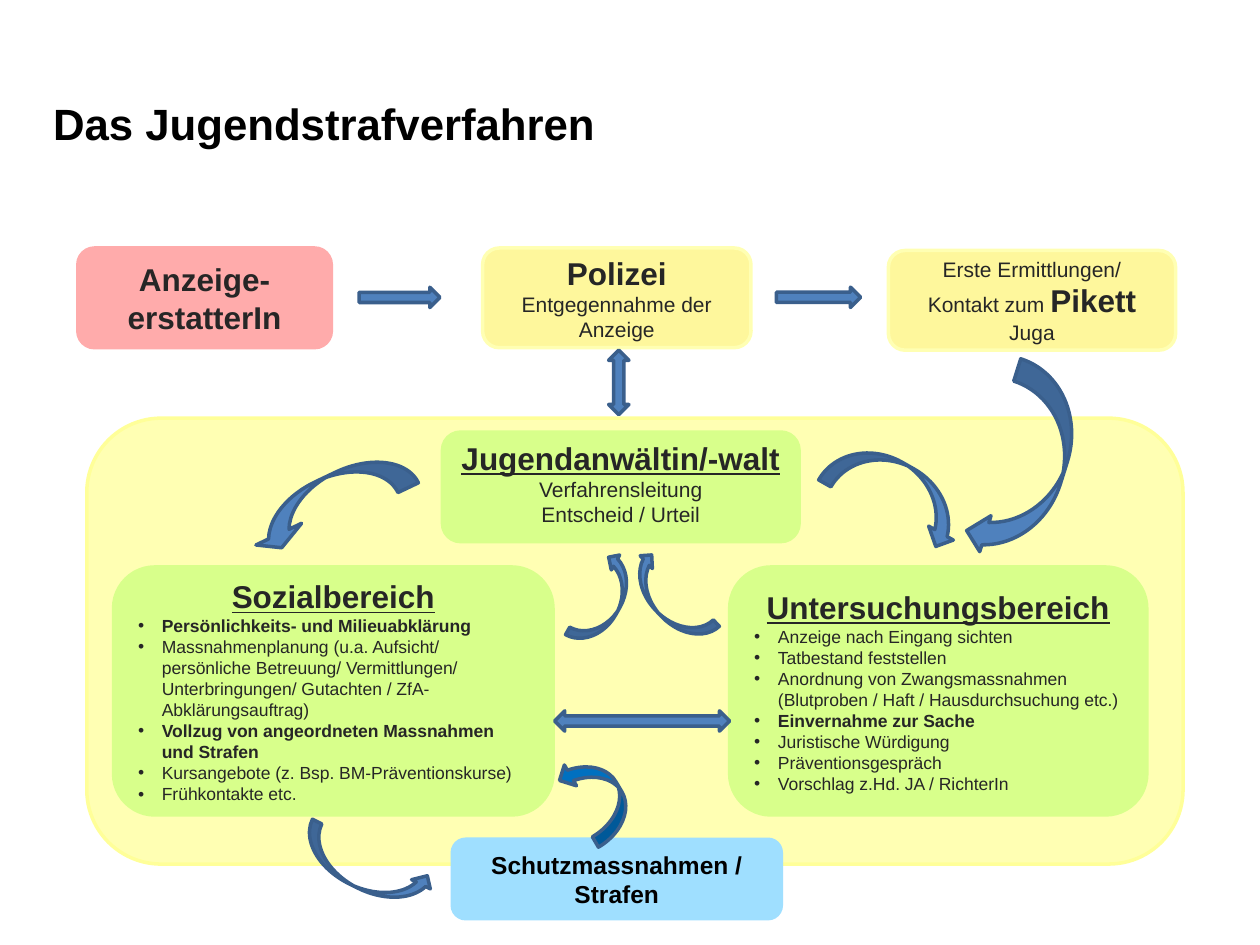
from lxml import etree
from pptx import Presentation
from pptx.dml.color import RGBColor
from pptx.enum import shapes as s, text as t
from pptx.oxml.ns import qn
from pptx.util import Cm, Pt

BLACK = RGBColor(0x00, 0x00, 0x00)
DARK = RGBColor(0x26, 0x26, 0x26)
YELLOW = RGBColor(0xFE, 0xF7, 0x9C)
PALE_YELLOW = RGBColor(0xFF, 0xFF, 0xB3)
AREA_EDGE = RGBColor(0xFF, 0xFF, 0x99)
RED = RGBColor(0xFF, 0xAB, 0xAB)
GREEN = RGBColor(0xD8, 0xFF, 0x8B)
LIGHT_BLUE = RGBColor(0x9F, 0xDF, 0xFF)
BLUE = RGBColor(0x4F, 0x81, 0xBD)
STRONG_BLUE = RGBColor(0x00, 0x70, 0xC0)
BLUE_EDGE = RGBColor(0x3A, 0x5F, 0x8C)

# Text formats
HEADING = {"size": Pt(18), "bold": True}
UNDERLINED = {**HEADING, "underline": True}
NORMAL = {"size": Pt(12), "bold": False}
GAP = {"size": Pt(14), "bold": False}
RESULT = {"size": Pt(14), "bold": True}
ITEM = {"size": Pt(10), "bold": False}
BOLD_ITEM = {"size": Pt(10), "bold": True}
BULLET_INDENT = Cm(0.48)

SHAPE = s.MSO_SHAPE

# Place (cm), fill, line, paragraphs as lists of (wording, format)
BOXES = [
    ((9.73, 5, 5.41, 2.01), YELLOW, PALE_YELLOW,
     [[("Polizei", HEADING)], [("Entgegennahme der Anzeige", NORMAL)]]),
    ((17.91, 5.05, 5.79, 2.01), YELLOW, PALE_YELLOW,
     [[("Erste Ermittlungen/", NORMAL)],
      [("Kontakt zum ", NORMAL), ("Pikett", HEADING), (" ", GAP), ("Juga", NORMAL)]]),
    ((1.57, 5, 5.11, 2.01), RED, RED, [[("Anzeige-erstatterIn", HEADING)]]),
    ((1.75, 8.43, 22.1, 8.99), PALE_YELLOW, AREA_EDGE, []),
    ((14.71, 11.43, 8.41, 5), GREEN, GREEN,
     [[("Untersuchungsbereich", UNDERLINED)],
      [("Anzeige nach Eingang sichten", ITEM)],
      [("Tatbestand feststellen", ITEM)],
      [("Anordnung von Zwangsmassnahmen (Blutproben / Haft / "
        "Hausdurchsuchung etc.)", ITEM)],
      [("Einvernahme zur Sache", BOLD_ITEM)],
      [("Juristische Würdigung", ITEM)],
      [("Präventionsgespräch", ITEM)],
      [("Vorschlag z.Hd. JA / RichterIn", ITEM)]]),
    ((2.29, 11.43, 8.86, 5), GREEN, GREEN,
     [[("Sozialbereich", UNDERLINED)],
      [("Persönlichkeits- und Milieuabklärung", BOLD_ITEM)],
      [("Massnahmenplanung (u.a. Aufsicht/ persönliche Betreuung/ Vermittlungen/ "
        "Unterbringungen/ Gutachten / ZfA-Abklärungsauftrag)", ITEM)],
      [("Vollzug von angeordneten Massnahmen und Strafen", BOLD_ITEM)],
      [("Kursangebote (z. Bsp. BM-Präventionskurse)", ITEM)],
      [("Frühkontakte etc.", ITEM)]]),
    ((8.92, 8.71, 7.19, 2.21), GREEN, GREEN,
     [[("Jugendanwältin/-walt", UNDERLINED)],
      [("Verfahrensleitung", NORMAL)],
      [("Entscheid / Urteil", NORMAL)]]),
    ((9.12, 16.92, 6.63, 1.6), LIGHT_BLUE, LIGHT_BLUE,
     [[("Schutzmassnahmen / Strafen", {**RESULT, "color": BLACK})]]),
]

# Kind, place (cm), rotation, fill, adjustments
ARROWS = [
    (SHAPE.CURVED_UP_ARROW, (4.85, 9.63, 3.56, 0.91), 154.6, BLUE, (0.5, 1.12, 0.3)),
    (SHAPE.LEFT_RIGHT_ARROW, (11.18, 14.33, 3.53, 0.41), 0, BLUE, ()),
    (SHAPE.UP_DOWN_ARROW, (12.27, 7.06, 0.41, 1.3), 0, BLUE, ()),
    (SHAPE.DOWN_ARROW, (7.85, 5.18, 0.41, 1.63), 270, BLUE, ()),
    (SHAPE.RIGHT_ARROW, (15.65, 5.79, 1.7, 0.41), 0, BLUE, ()),
    (SHAPE.CURVED_LEFT_ARROW, (19.94, 7.37, 1.52, 4.01), 17.5, BLUE, (0.31, 0.5, 0.25)),
    (SHAPE.CURVED_DOWN_ARROW, (16.59, 9.35, 3, 1.14), 29.6, BLUE, ()),
    (SHAPE.CURVED_DOWN_ARROW, (12.42, 11.73, 2.16, 0.71), 226.5, BLUE, ()),
    (SHAPE.CURVED_UP_ARROW, (11.2, 11.76, 1.96, 0.69), 299.1, BLUE, ()),
    (SHAPE.CURVED_UP_ARROW, (5.97, 17.09, 2.79, 0.84), 26.2, BLUE, ()),
    (SHAPE.CURVED_UP_ARROW, (11.13, 15.57, 1.8, 0.97), 239.7, STRONG_BLUE, ()),
]


def set_all(target, values):
    for name, value in values.items():
        setattr(target, name, value)


def format_font(font, values):
    values = {"name": "Arial", "color": DARK, **values}
    font.color.rgb = values.pop("color")
    set_all(font, values)


def add_bullet(paragraph):
    properties = paragraph._p.get_or_add_pPr()
    properties.set("marL", str(BULLET_INDENT))
    properties.set("indent", str(-BULLET_INDENT))
    etree.SubElement(properties, qn("a:buFont")).set("typeface", "Arial")
    etree.SubElement(properties, qn("a:buChar")).set("char", "•")


def add_filled_shape(slide, kind, place, fill, line):
    shape = slide.shapes.add_shape(kind, *map(Cm, place))
    shape.shadow.inherit = False
    shape.fill.solid()
    shape.fill.fore_color.rgb = fill
    shape.line.color.rgb = line
    shape.line.width = Pt(2)
    return shape


def add_box(slide, place, fill, line, paragraphs):
    shape = add_filled_shape(slide, SHAPE.ROUNDED_RECTANGLE, place, fill, line)
    frame = shape.text_frame
    set_all(frame, {"word_wrap": True, "vertical_anchor": t.MSO_ANCHOR.MIDDLE})
    for index, runs in enumerate(paragraphs):
        paragraph = frame.paragraphs[0] if index == 0 else frame.add_paragraph()
        if runs[0][1] in (ITEM, BOLD_ITEM):
            paragraph.alignment = t.PP_ALIGN.LEFT
            add_bullet(paragraph)
        else:
            paragraph.alignment = t.PP_ALIGN.CENTER
        for wording, values in runs:
            run = paragraph.add_run()
            run.text = wording
            format_font(run.font, values)
    return shape


def add_arrow(slide, kind, place, rotation, fill, adjustments):
    shape = add_filled_shape(slide, kind, place, fill, BLUE_EDGE)
    shape.rotation = rotation
    for index, value in enumerate(adjustments):
        shape.adjustments[index] = value


def set_title(slide, wording):
    title = slide.shapes.title
    set_all(title, {"left": Cm(1.07), "top": Cm(1.4),
                    "width": Cm(22.73), "height": Cm(1.6)})
    frame = title.text_frame
    frame.text = wording
    set_all(frame, {"margin_left": 0, "margin_right": 0, "margin_top": 0,
                    "margin_bottom": 0, "word_wrap": True,
                    "auto_size": t.MSO_AUTO_SIZE.NONE,
                    "vertical_anchor": t.MSO_ANCHOR.BOTTOM})
    paragraph = frame.paragraphs[0]
    set_all(paragraph, {"alignment": t.PP_ALIGN.LEFT, "line_spacing": Pt(25)})
    format_font(paragraph.runs[0].font, {"size": Pt(25), "bold": True, "color": BLACK})


def main():
    presentation = Presentation()
    set_all(presentation, {"slide_width": Cm(25.4), "slide_height": Cm(19.05)})
    slide = presentation.slides.add_slide(presentation.slide_layouts[5])
    set_title(slide, "Das Jugendstrafverfahren")

    # Stations of the procedure
    boxes = [add_box(slide, *box) for box in BOXES]
    lawyer_box = boxes[-2]
    lawyer_box.text_frame.margin_bottom = Cm(0.29)

    # Flow between the stations
    for arrow in ARROWS:
        add_arrow(slide, *arrow)

    presentation.save("out.pptx")


if __name__ == "__main__":
    main()
